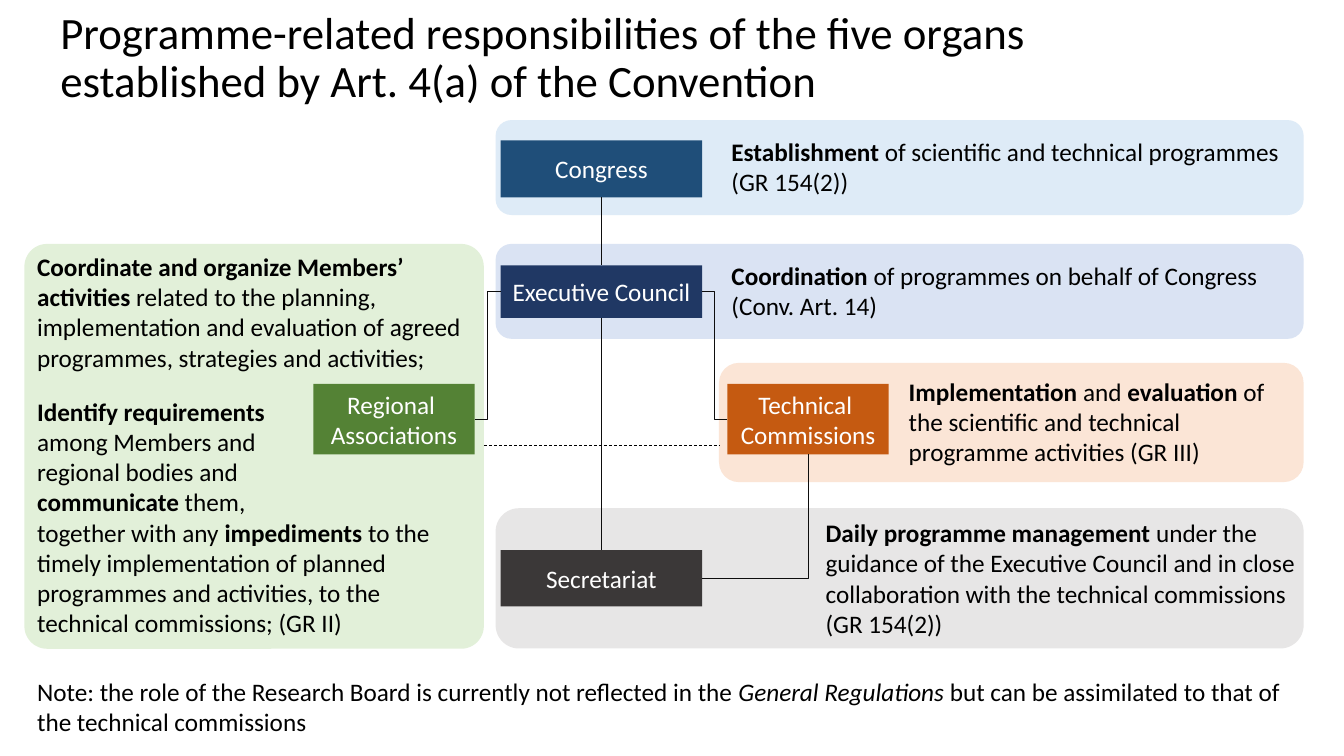
from dataclasses import dataclass
from typing import NamedTuple

from lxml import etree
from pptx import Presentation
from pptx.dml.color import RGBColor
from pptx.enum.dml import MSO_LINE
from pptx.enum.shapes import MSO_CONNECTOR, MSO_SHAPE
from pptx.enum.text import MSO_ANCHOR, MSO_AUTO_SIZE, PP_ALIGN
from pptx.oxml.ns import qn
from pptx.util import Inches, Pt

RECT, ROUND = MSO_SHAPE.RECTANGLE, MSO_SHAPE.ROUNDED_RECTANGLE
STRAIGHT, ELBOW = MSO_CONNECTOR.STRAIGHT, MSO_CONNECTOR.ELBOW
CENTER, MIDDLE = PP_ALIGN.CENTER, MSO_ANCHOR.MIDDLE
GROW = MSO_AUTO_SIZE.SHAPE_TO_FIT_TEXT
TOP, LEFT, BOTTOM, RIGHT = range(4)  # connection sites of a rectangle

SLIDE_W, SLIDE_H = Inches(13.33), Inches(7.5)
COLS, ROWS = 160, 90
FONT = "Calibri"
COLORS = {
    "text": "000000", "white": "FFFFFF", "line": "0D0D0D",
    "congress": "1F4E79", "congress_pale": "DEEBF7",
    "council": "203864", "council_pale": "DAE3F3",
    "regional": "548235", "regional_pale": "E2F0D9",
    "technical": "C55A11", "technical_pale": "FBE5D6",
    "secretariat": "3B3838", "secretariat_pale": "E7E6E6",
}


class Area(NamedTuple):
    """Left, top, width and height in grid columns and rows."""
    col: float
    row: float
    cols: float
    rows: float


class Run(NamedTuple):
    text: str
    bold: bool = False
    italic: bool = False


@dataclass
class Panel:
    color: str
    area: Area
    corner: float = 0.1667


@dataclass
class Organ:
    name: str
    lines: list[str]
    area: Area


@dataclass
class Note:
    area: Area
    paragraphs: list[list[Run]]
    gap_before: int | None = None  # index of the paragraph set apart


@dataclass
class Link:
    start: str
    start_site: int
    end: str
    end_site: int
    kind: int = STRAIGHT
    preset: str | None = None


def bold(text: str) -> Run:
    return Run(text, bold=True)


PANEL_COL, PANEL_COLS = 59, 96.2
BOX_COL, BOX_COLS = 59.6, 24
SIDE_COLS, SIDE_ROWS = 19.2, 8.4
SIDE_ROW = 45.7
NOTE_COL = 85.9

PANELS = [
    Panel("regional_pale", Area(2.9, 29.04, 54.7, 48.2), 0.056),
    Panel("secretariat_pale", Area(PANEL_COL, 60.5, PANEL_COLS, 16.7)),
    Panel("technical_pale", Area(85.6, 43.2, 69.6, 14.2)),
    Panel("council_pale", Area(PANEL_COL, 29.04, PANEL_COLS, 11.3)),
    Panel("congress_pale", Area(PANEL_COL, 14.3, PANEL_COLS, 11.3)),
]
ORGANS = [
    Organ("congress", ["Congress"], Area(BOX_COL, 16.7, BOX_COLS, 6.8)),
    Organ("council", ["Executive Council"], Area(BOX_COL, 31.6, BOX_COLS, 6.24)),
    Organ("regional", ["Regional ", "Associations"],
          Area(37.3, SIDE_ROW, SIDE_COLS, SIDE_ROWS)),
    Organ("technical", ["Technical ", "Commissions"],
          Area(86.6, SIDE_ROW, SIDE_COLS, SIDE_ROWS)),
    Organ("secretariat", ["Secretariat"], Area(BOX_COL, 65.5, BOX_COLS, 6.7)),
]
TITLE = Note(Area(6, 0, 149.3, 14), [[Run(
    "Programme-related responsibilities of the five organs \v"
    "established by Art. 4(a) of the Convention")]])
NOTES = [
    Note(Area(3.24, 29.3, 54.4, 47.6), [
        [bold("Coordinate and organize Members’ activities "),
         Run("related to the planning, implementation and evaluation of agreed "
             "programmes, strategies and activities;")],
        [bold("Identify requirements")],
        [Run("among Members and")],
        [Run("regional bodies and")],
        [bold("communicate"), Run(" them,")],
        [Run("together with any "), bold("impediments"),
         Run(" to the timely implementation of planned programmes and "
             "activities, to the technical commissions; (GR II)")],
    ], gap_before=1),
    Note(Area(NOTE_COL, 15.6, 69.4, 8.5), [
        [bold("Establishment"),
         Run(" of scientific and technical programmes (GR 154(2))")]]),
    Note(Area(NOTE_COL, 30.4, 70.3, 8.5), [
        [bold("Coordination"),
         Run(" of programmes on behalf of Congress (Conv. Art. 14)")]]),
    Note(Area(107, 44.2, 48.2, 12.1), [
        [bold("Implementation"), Run(" and "), bold("evaluation"),
         Run(" of the scientific and technical programme activities (GR III)")]]),
    Note(Area(97.1, 61, 58.3, 15.7), [
        [bold("Daily programme management "),
         Run("under the guidance of the Executive Council and in close "
             "collaboration with the technical commissions (GR 154(2))")]]),
    Note(Area(3.24, 79.9, 153.1, 8.5), [
        [Run("Note: the role of the Research Board is currently not reflected in the "),
         Run("General Regulations", italic=True),
         Run(" but can be assimilated to that of the technical commissions")]]),
]
LINKS = [
    Link("congress", BOTTOM, "council", TOP),
    Link("council", RIGHT, "technical", LEFT, ELBOW),
    Link("regional", RIGHT, "council", LEFT, ELBOW),
    Link("council", BOTTOM, "secretariat", TOP),
    Link("secretariat", RIGHT, "technical", BOTTOM, ELBOW, "bentConnector2"),
]


def rgb(name: str) -> RGBColor:
    return RGBColor.from_string(COLORS[name])


def x(col: float) -> int:
    return round(SLIDE_W * col / COLS)


def y(row: float) -> int:
    return round(SLIDE_H * row / ROWS)


def place(area: Area) -> tuple[int, int, int, int]:
    return x(area.col), y(area.row), x(area.cols), y(area.rows)


def write(tf, paragraphs: list[list[Run]], color="text", size=18, **p_format) -> None:
    """Fill a text frame; a vertical tab in a run is a line break."""
    tf.word_wrap = True
    for i, runs in enumerate(paragraphs):
        p = tf.add_paragraph() if i else tf.paragraphs[0]
        for key, value in p_format.items():
            setattr(p, key, value)
        for run in runs:
            font_format = {"name": FONT, "size": Pt(size),
                           "bold": run.bold, "italic": run.italic}
            for j, part in enumerate(run.text.split("\v")):
                if j:
                    p.add_line_break()
                r = p.add_run()
                r.text = part
                for key, value in font_format.items():
                    setattr(r.font, key, value)
                r.font.color.rgb = rgb(color)


def add_block(s, kind: int, area: Area, color: str):
    sp = s.shapes.add_shape(kind, *place(area))
    sp.shadow.inherit = False
    sp.fill.solid()
    sp.fill.fore_color.rgb = rgb(color)
    sp.line.fill.background()
    return sp


def add_note(s, note: Note):
    sp = s.shapes.add_textbox(*place(note.area))
    write(sp.text_frame, note.paragraphs)
    sp.text_frame.auto_size = GROW
    if note.gap_before is not None:
        sp.text_frame.paragraphs[note.gap_before].space_before = Pt(17)


def add_line(s, kind: int, color: str, ends=(0, 0, 0, 0)):
    line = s.shapes.add_connector(kind, *ends)
    line.line.color.rgb = rgb(color)
    line.line.width = Pt(0.5)
    etree.SubElement(line._element.spPr, qn("a:effectLst"))
    return line


def main() -> None:
    prs = Presentation()
    prs.slide_width, prs.slide_height = SLIDE_W, SLIDE_H
    s = prs.slides.add_slide(prs.slide_layouts[6])

    for panel in PANELS:
        add_block(s, ROUND, panel.area, panel.color).adjustments[0] = panel.corner

    title = s.shapes.add_textbox(*place(TITLE.area))
    write(title.text_frame, TITLE.paragraphs, size=32, line_spacing=0.9)
    title.text_frame.vertical_anchor = MIDDLE

    boxes = {}
    for organ in ORGANS:
        sp = boxes[organ.name] = add_block(s, RECT, organ.area, organ.name)
        write(sp.text_frame, [[Run(line)] for line in organ.lines], "white", alignment=CENTER)
        sp.text_frame.vertical_anchor = MIDDLE

    for note in NOTES:
        add_note(s, note)

    for link in LINKS:
        line = add_line(s, link.kind, "line")
        line.begin_connect(boxes[link.start], link.start_site)
        line.end_connect(boxes[link.end], link.end_site)
        if link.preset:
            line._element.spPr.find(qn("a:prstGeom")).set("prst", link.preset)

    dashed = add_line(s, STRAIGHT, "text", (x(57.6), y(53.04), x(85.6), y(53.04)))
    dashed.line.dash_style = MSO_LINE.DASH

    prs.save("out.pptx")


if __name__ == "__main__":
    main()
